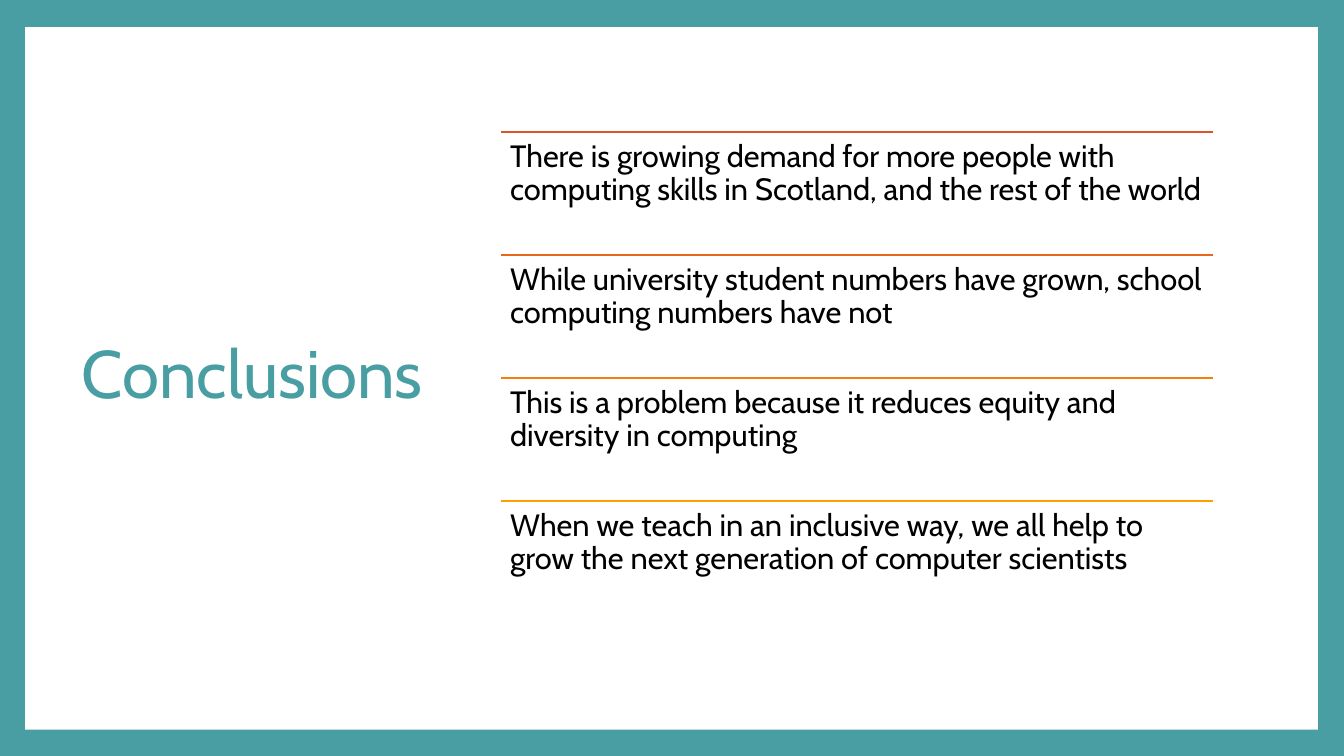
"""Build the Conclusions slide: a title beside four ruled statements."""
from lxml import etree
from pptx import Presentation
from pptx import util as u
from pptx.dml.color import RGBColor
from pptx.enum import shapes, text
from pptx.oxml.ns import qn

COLOURS = {"teal": "499EA3", "panel": "FFFFFF", "body": "000000"}
FONT = "Cabin"
STATEMENTS = [
    ("DF5327", "There is growing demand for more people with computing skills in Scotland, and the rest of the world"),
    ("E9661A", "While university student numbers have grown, school computing numbers have not"),
    ("F47F0D", "This is a problem because it reduces equity and diversity in computing"),
    ("FE9E00", "When we teach in an inclusive way, we all help to grow the next generation of computer scientists"),
]
LIST_LEFT, LIST_TOP = u.Inches(4.97), u.Inches(1.31)
LIST_WIDTH, ROW_HEIGHT = u.Inches(7.06), u.Inches(1.22)
INSET = u.Inches(0.09)


def style_text(frame, size, colour):
    frame.word_wrap = True
    frame.auto_size = text.MSO_AUTO_SIZE.NONE
    para = frame.paragraphs[0]
    para.alignment = text.PP_ALIGN.LEFT
    para.line_spacing = 0.9
    para.font.name = FONT
    para.font.size = u.Pt(size)
    para.font.color.rgb = RGBColor.from_string(colour)


deck = Presentation()
deck.slide_width, deck.slide_height = u.Inches(13.33), u.Inches(7.5)
page = deck.slides.add_slide(deck.slide_layouts[5])
page.background.fill.solid()
page.background.fill.fore_color.rgb = RGBColor.from_string(COLOURS["teal"])

panel = page.shapes.add_shape(
    shapes.MSO_SHAPE.RECTANGLE, u.Inches(0.25), u.Inches(0.27), u.Inches(12.82), u.Inches(6.97))
panel.shadow.inherit = False
panel.fill.solid()
panel.fill.fore_color.rgb = RGBColor.from_string(COLOURS["panel"])
panel.line.fill.background()

title = page.shapes.title
title.element.addprevious(panel.element)
title.left, title.top = u.Inches(0.71), u.Inches(0.67)
title.width, title.height = u.Inches(3.68), u.Inches(6.13)
title.text_frame.text = "Conclusions"
title.text_frame.vertical_anchor = text.MSO_ANCHOR.MIDDLE
style_text(title.text_frame, 48, COLOURS["teal"])

for row, (colour, statement) in enumerate(STATEMENTS):
    top = LIST_TOP + row * ROW_HEIGHT
    rule = page.shapes.add_connector(
        shapes.MSO_CONNECTOR.STRAIGHT, LIST_LEFT, top, LIST_LEFT + LIST_WIDTH, top)
    rule.line.color.rgb = RGBColor.from_string(colour)
    rule.line.width = u.Pt(1.5)
    etree.SubElement(rule.element.spPr, qn("a:effectLst"))

    box = page.shapes.add_textbox(LIST_LEFT, top, LIST_WIDTH, ROW_HEIGHT)
    frame = box.text_frame
    frame.margin_left = frame.margin_right = frame.margin_top = frame.margin_bottom = INSET
    frame.text = statement
    style_text(frame, 22, COLOURS["body"])

deck.save("out.pptx")
